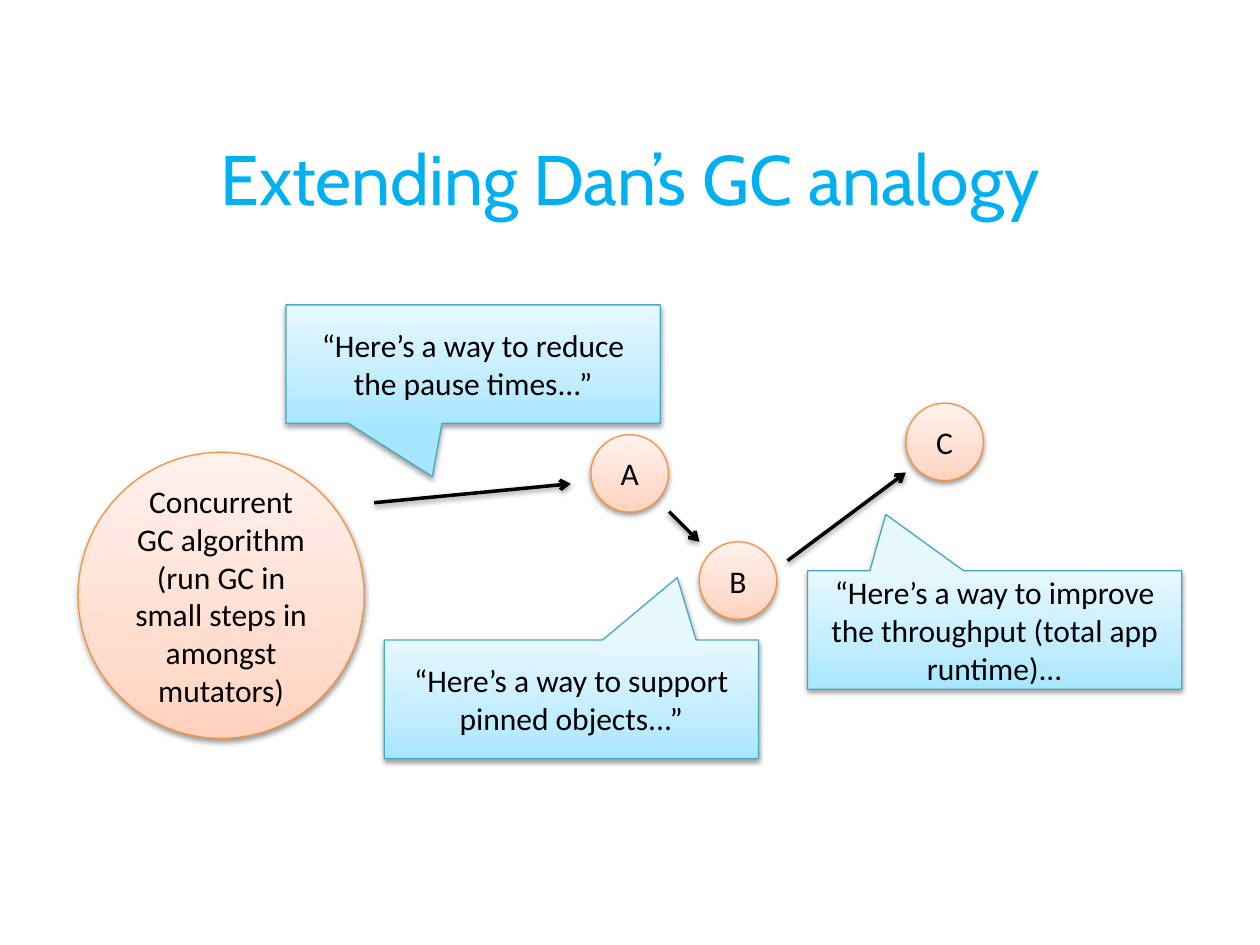
from lxml import etree
from pptx import Presentation
from pptx.dml.color import RGBColor
from pptx.enum.shapes import MSO_CONNECTOR, MSO_SHAPE
from pptx.enum.text import MSO_ANCHOR, PP_ALIGN
from pptx.oxml import parse_xml
from pptx.oxml.ns import nsdecls, qn
from pptx.util import Inches, Pt

ELLIPSE = MSO_SHAPE.OVAL
CALLOUT = MSO_SHAPE.RECTANGULAR_CALLOUT
STRAIGHT = MSO_CONNECTOR.STRAIGHT
CENTER = PP_ALIGN.CENTER
MIDDLE = MSO_ANCHOR.MIDDLE

# The slide is a grid of 100 columns by 75 rows of square cells
COLUMNS, ROWS = 100, 75
CELL = Inches(0.1)
CIRCLE_SIZE = 6.15
CALLOUT_SIZE = (29.7, 9.4)

# Gradient stops (position in percent, colour) and line colour
ORANGE = ([(0, "FFD2BD"), (35, "FFDED0"), (100, "FFF2ED")], "F69240")
BLUE = ([(0, "A7E6FF"), (35, "C1EDFF"), (100, "E7F8FF")], "46AAC5")


def color(value):
    return RGBColor.from_string(value)


def cells(*counts):
    return [round(count * CELL) for count in counts]


def write_text(shape, text, size=18, font="Calibri", fill="000000"):
    frame = shape.text_frame
    frame.word_wrap = True
    frame.vertical_anchor = MIDDLE
    paragraph = frame.paragraphs[0]
    paragraph.alignment = CENTER
    run = paragraph.add_run()
    run.text = text
    run.font.size = Pt(size)
    run.font.name = font
    run.font.color.rgb = color(fill)


def add_shadow(properties):
    """Append a soft shadow, cast straight down, after the line settings."""
    properties.append(parse_xml(
        f'<a:effectLst {nsdecls("a")}>'
        f'<a:outerShdw blurRad="{Pt(3.1)}" dist="{Pt(1.6)}" dir="5400000" rotWithShape="0">'
        '<a:srgbClr val="000000"><a:alpha val="38000"/></a:srgbClr>'
        '</a:outerShdw></a:effectLst>'))


def add_gradient(shape, stops):
    shape.fill.gradient()
    shape.fill.gradient_angle = 90
    stop_list = shape._element.spPr.find(".//" + qn("a:gsLst"))
    for stop in list(stop_list):
        stop_list.remove(stop)
    for position, value in stops:
        stop = etree.SubElement(stop_list, qn("a:gs"), pos=str(position * 1000))
        etree.SubElement(stop, qn("a:srgbClr"), val=value)


def add_bubble(shapes, kind, box, text, style, pointer=None):
    stops, line_color = style
    shape = shapes.add_shape(kind, *cells(*box))
    for index, value in enumerate(pointer or ()):
        shape.adjustments[index] = value
    add_gradient(shape, stops)
    shape.line.color.rgb = color(line_color)
    shape.line.width = Pt(0.75)
    add_shadow(shape._element.spPr)
    write_text(shape, text)


def add_arrow(shapes, start, end):
    arrow = shapes.add_connector(STRAIGHT, *cells(*start, *end))
    arrow.line.color.rgb = color("000000")
    arrow.line.width = Pt(2)
    properties = arrow._element.spPr
    etree.SubElement(properties.find(qn("a:ln")), qn("a:tailEnd"), type="arrow")
    add_shadow(properties)


def add_title(slide, box):
    title = slide.shapes.add_textbox(*cells(*box))
    write_text(title, "Extending Dan’s GC analogy", size=40, font="Cabin", fill="00B0F0")


def add_step(slide, origin, letter, quote, circle, callout, pointer, arrow):
    """Group a callout, an arrow and a circle, placed from the step's corner."""
    def place(point):
        return origin[0] + point[0], origin[1] + point[1]

    shapes = slide.shapes.add_group_shape().shapes
    add_bubble(shapes, CALLOUT, (*place(callout), *CALLOUT_SIZE), quote, BLUE, pointer)
    add_arrow(shapes, *map(place, arrow))
    add_bubble(shapes, ELLIPSE, (*place(circle), CIRCLE_SIZE, CIRCLE_SIZE), letter, ORANGE)


def main():
    presentation = Presentation()
    presentation.slide_width, presentation.slide_height = cells(COLUMNS, ROWS)
    slide = presentation.slides.add_slide(presentation.slide_layouts[6])

    add_title(slide, (5, 7.8, 90, 12.5))

    # Starting point
    add_bubble(slide.shapes, ELLIPSE, (6.2, 35.9, 22.7, 22.7),
               "Concurrent GC algorithm (run GC in small steps in amongst mutators)", ORANGE)

    # Improvements, each measured from the top left corner of its group
    add_step(slide, (22.7, 24.2), "A", "“Here’s a way to reduce the pause times...”",
             circle=(24.2, 10.3), callout=(0, 0), pointer=(-0.109, 0.949),
             arrow=((7, 15.7), (22.6, 14.2)))
    add_step(slide, (30.5, 43), "B", "“Here’s a way to support pinned objects...”",
             circle=(25, 0), callout=(0, 7.8), pointer=(0.283, -1.027),
             arrow=((22.6, -2.4), (25, 0)))
    add_step(slide, (62.5, 32), "C",
             "“Here’s a way to improve the throughput (total app runtime)...",
             circle=(9.4, 0), callout=(1.6, 13.3), pointer=(-0.291, -0.975),
             arrow=((0, 12.5), (9.4, 5.5)))

    presentation.save("out.pptx")


if __name__ == "__main__":
    main()
